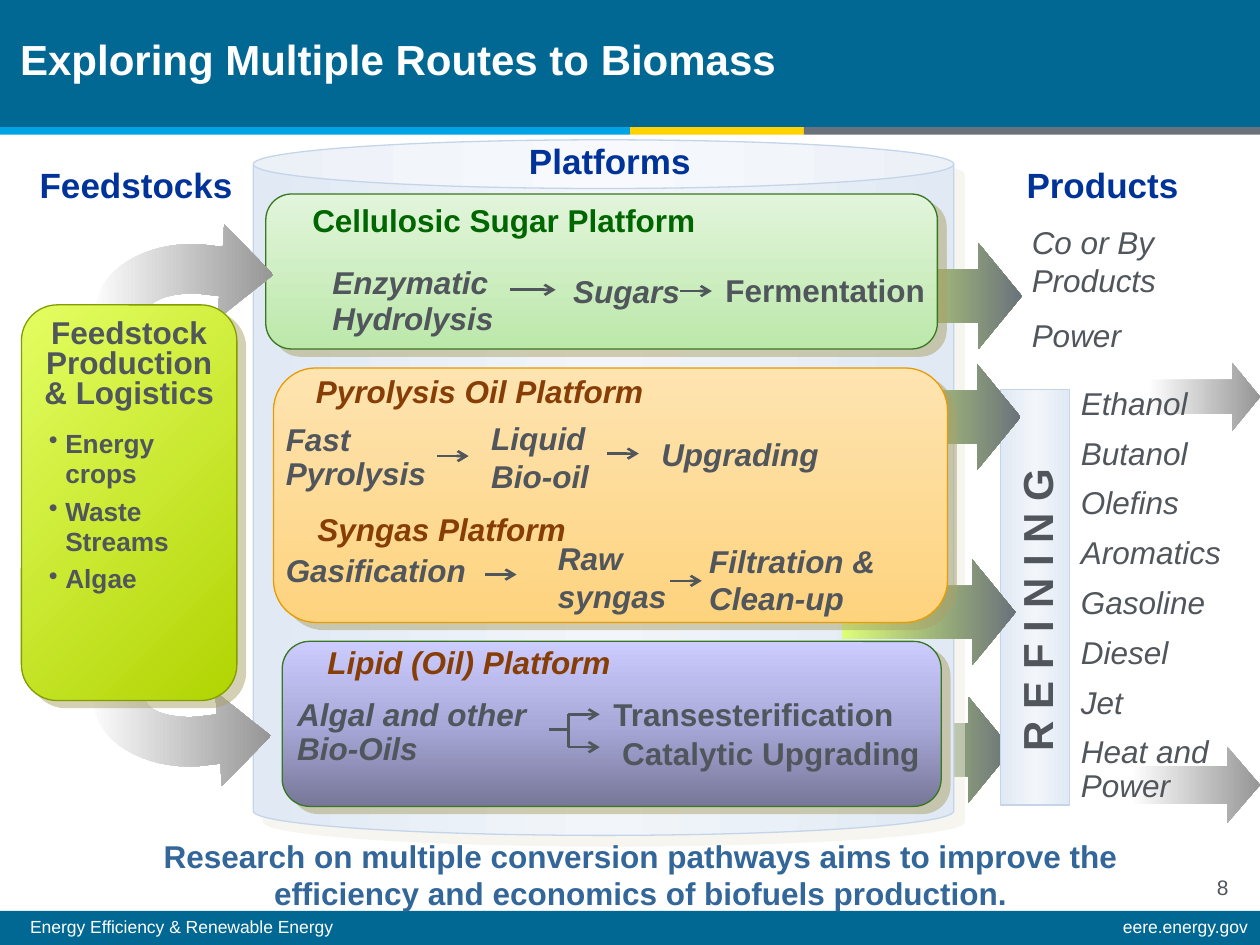
from lxml import etree
from pptx import Presentation
from pptx.dml.color import RGBColor
from pptx.enum.shapes import MSO_CONNECTOR, MSO_SHAPE
from pptx.enum.text import MSO_ANCHOR, PP_ALIGN
from pptx.oxml.ns import qn
from pptx.util import Inches, Pt

RECT, ROUND = MSO_SHAPE.RECTANGLE, MSO_SHAPE.ROUNDED_RECTANGLE
ARROW, CAN = MSO_SHAPE.RIGHT_ARROW, MSO_SHAPE.CAN
STRAIGHT = MSO_CONNECTOR.STRAIGHT
LEFT, CENTER, RIGHT = PP_ALIGN.LEFT, PP_ALIGN.CENTER, PP_ALIGN.RIGHT
MIDDLE, TOP = MSO_ANCHOR.MIDDLE, MSO_ANCHOR.TOP

rgb = RGBColor.from_string
WHITE, TEAL, SKY = rgb("FFFFFF"), rgb("006892"), rgb("00A4E4")
YELLOW, SLATE, GRAY = rgb("FFD200"), rgb("6A737B"), rgb("50565C")
NAVY, BROWN, GREEN, STEEL = rgb("003399"), rgb("873E06"), rgb("006600"), rgb("336699")
PALE_EDGE, GREEN_EDGE = rgb("C4D5EA"), rgb("397620")
ORANGE_EDGE, LIME_EDGE = rgb("E89B02"), rgb("829C02")
SILVER = [(0, rgb("FFFFFF")), (100, rgb("969696"))]
LIME_GRAY = [(0, rgb("DCFF79")), (100, SLATE)]
PALE = [(0, rgb("E0E9F4")), (50, rgb("F2F6FA")), (100, rgb("E0E9F4"))]
VIOLET = [(0, rgb("777799")), (50, rgb("A9A9DA")), (100, rgb("CCCCFF"))]
PEACH = [(0, rgb("FEE4B1")), (100, rgb("FED37E"))]
MINT = [(0, rgb("E2F5DB")), (100, rgb("BCE8AA"))]
LIME = [(0, rgb("E4FE62")), (100, rgb("B1D402"))]
TAN_SHADOW = (rgb("ABA269"), 6.4, 39)
PALE_SHADOW = (rgb("EEECE1"), 8.5, 45)

TITLE = "Exploring Multiple Routes to Biomass"
# Bars: left, top, width, height, colour
BARS = [(0, 0, 10, 1.01, TEAL), (0, 7.23, 10, 0.27, TEAL), (0, 1.01, 5, 0.06, SKY),
        (5, 1.01, 1.38, 0.06, YELLOW), (6.38, 1.01, 3.62, 0.06, SLATE)]

# Diagram shapes, back to front: preset, place, gradient, other format
OUTPUT_ARROW = (1.38, 0.84)
DIAGRAM = [
    (ARROW, (9.11, 2.88, 0.89, 0.54), SILVER, dict(adjust=(0.5, 0.41))),
    (ARROW, (8.97, 5.93, 1.03, 0.6), SILVER, dict(adjust=(0.5, 0.43))),
    (ARROW, (6.65, 5.53, *OUTPUT_ARROW), LIME_GRAY, dict(adjust=(0.5, 0.41))),
    (CAN, (2.01, 1.11, 5.56, 5.52), PALE,
     dict(adjust=(0.07,), edge=PALE_EDGE, shadow=PALE_SHADOW)),
    (ROUND, (2.24, 5.09, 5.23, 1.31), VIOLET,
     dict(angle=270, edge=GREEN_EDGE, shadow=TAN_SHADOW)),
    (RECT, (7.94, 3.09, 0.55, 3.3), PALE, dict(edge=PALE_EDGE)),
    *[(ARROW, (left, top, *OUTPUT_ARROW), LIME_GRAY, dict(adjust=(0.5, 0.41)))
      for left, top in [(6.73, 1.93), (6.72, 2.89), (6.68, 4.44)]],
    (ROUND, (2.17, 2.92, 5.35, 2.02), PEACH,
     dict(angle=90, edge=ORANGE_EDGE, shadow=TAN_SHADOW)),
    (ROUND, (2.11, 1.54, 5.33, 1.23), MINT,
     dict(angle=90, edge=GREEN_EDGE, shadow=TAN_SHADOW)),
]
FEEDSTOCK = (ROUND, (0.17, 2.42, 1.71, 3.14), LIME,
             dict(angle=45, edge=LIME_EDGE, shadow=TAN_SHADOW))

# Bent feed arrow: a pair is a corner, a triple of pairs is a curve
BEND = [(2.17, 2.18), (1.78, 1.78), (1.77, 1.96), (1.6, 1.94),
        ((1.16, 1.91), (0.78, 2.14), (0.76, 2.45)), (0.71, 3.03), (1.13, 3.07),
        (1.17, 2.48), ((1.18, 2.38), (1.36, 2.32), (1.57, 2.33)),
        (1.74, 2.35), (1.73, 2.53)]

# Step lines: x1, y1, x2, y2, arrowhead
LINES = [(4.05, 2.3, 4.41, 2.3, True), (5.4, 2.31, 5.65, 2.31, True),
         (3.47, 3.62, 3.72, 3.62, True), (4.82, 3.6, 5.07, 3.6, True),
         (3.85, 4.56, 4.1, 4.56, True), (5.32, 4.61, 5.57, 4.61, True),
         (4.51, 5.67, 4.76, 5.67, True), (4.51, 5.93, 4.76, 5.93, True),
         (4.51, 5.67, 4.51, 5.93, False), (4.5, 5.79, 4.36, 5.79, False)]

# Texts: words (a list gives paragraphs), place, format
HEAD = dict(size=20, color=NAVY, bold=True, align=CENTER)
STEP = dict(bold=True, italic=True)
PLATFORM = dict(STEP, color=BROWN)
FOOT = dict(size=10, color=WHITE, spacing=0.9)
TEXTS = [
    ("Energy Efficiency & Renewable Energy", (0.14, 7.24, 7.97, 0.26), FOOT),
    ("eere.energy.gov", (5.99, 7.24, 4.01, 0.26), dict(FOOT, align=RIGHT)),
    ("8", (9.56, 6.89, 0.43, 0.3), dict(size=12)),
    ("Feedstocks", (-0.23, 1.25, 2.62, 0.43), HEAD),
    ("Platforms", (2.74, 1.06, 4.2, 0.43), HEAD),
    ("Products", (7.71, 1.25, 2.08, 0.43), HEAD),
    ("Feedstock\vProduction\v& Logistics", (0.17, 2.49, 1.71, 0.82),
     dict(bold=True, align=CENTER, spacing=0.8)),
    (["Energy crops", "Waste Streams", "Algae"], (0.29, 3.36, 1.57, 1.73),
     dict(size=15, bold=True, spacing=0.95, before=4.5, bullet="•")),
    ("Cellulosic Sugar Platform", (2.38, 1.55, 4.15, 0.4), dict(bold=True, color=GREEN)),
    ("Enzymatic Hydrolysis", (2.54, 2.06, 1.6, 0.67), dict(STEP, spacing=0.95)),
    ("Sugars", (4.45, 2.11, 1.11, 0.37), STEP),
    ("Fermentation", (5.66, 2.1, 1.86, 0.37), dict(bold=True)),
    ("Pyrolysis Oil Platform", (2.41, 2.94, 3.94, 0.37), dict(PLATFORM, spacing=0.9)),
    ("Fast Pyrolysis", (2.17, 3.32, 1.6, 0.65), dict(STEP, spacing=0.9)),
    ("Liquid\vBio-oil", (3.8, 3.28, 1, 0.71), STEP),
    ("Upgrading", (5.15, 3.4, 2.27, 0.37), STEP),
    ("Syngas Platform", (2.42, 4, 3.31, 0.4), PLATFORM),
    ("Gasification", (2.17, 4.36, 1.73, 0.37), dict(STEP, spacing=0.9)),
    ("Raw syngas", (4.33, 4.23, 1.08, 0.71), STEP),
    ("Filtration &\vClean-up", (5.53, 4.25, 1.67, 0.64), STEP),
    ("Lipid (Oil) Platform", (2.5, 5.09, 3.94, 0.37), dict(PLATFORM, spacing=0.9)),
    ("Algal and other Bio-Oils", (2.26, 5.5, 2.02, 0.65), dict(STEP, spacing=0.9)),
    ("Transesterification", (4.77, 5.47, 2.69, 0.4), dict(bold=True)),
    ("Catalytic Upgrading", (4.84, 5.78, 2.9, 0.4), dict(bold=True)),
    ("R E F I N I N G", (6.99, 4.59, 2.47, 0.5),
     dict(size=24, bold=True, align=CENTER, rotation=270)),
    (["Co or By Products", "Power"], (8.09, 1.72, 1.91, 1.15), dict(italic=True, before=10)),
    (["Ethanol", "Butanol", "Olefins", "Aromatics", "Gasoline", "Diesel", "Jet",
      "Heat and Power"], (8.48, 3.03, 1.52, 3.49), dict(italic=True, spacing=0.9, before=9)),
    ("Research on multiple conversion pathways aims to improve the efficiency and "
     "economics of biofuels production.", (0.75, 6.59, 8.67, 0.7),
     dict(bold=True, color=STEEL, align=CENTER)),
]


def write(box, text, size=18, color=GRAY, bold=False, italic=False, align=LEFT,
          spacing=1.0, before=0, bullet=None, margin=0, anchor=TOP, rotation=0):
    box.rotation = rotation
    frame = box.text_frame
    frame.word_wrap = True
    frame.vertical_anchor = anchor
    for index, words in enumerate([text] if isinstance(text, str) else text):
        para = frame.add_paragraph() if index else frame.paragraphs[0]
        para.text = words
        para.alignment = align
        para.line_spacing = spacing
        para.space_before = Pt(before if index else 0)
        properties = para._p.get_or_add_pPr()
        if margin:
            properties.set("marL", str(Inches(margin)))
        if bullet:
            properties.set("marL", str(Inches(0.13)))
            properties.set("indent", str(Inches(-0.13)))
            etree.SubElement(properties, qn("a:buChar"), char=bullet)
        for span in para.runs:
            font = span.font
            font.name, font.size, font.bold, font.italic = "Arial", Pt(size), bold, italic
            font.color.rgb = color


def paint(shape, stops, angle=0, edge=None, shadow=None, adjust=()):
    for index, value in enumerate(adjust):
        shape.adjustments[index] = value
    shape.fill.gradient()
    shape.fill.gradient_angle = (360 - angle) % 360
    stop_list = shape.element.spPr.find(".//" + qn("a:gsLst"))
    stop_list[:] = []
    for position, color in stops:
        stop = etree.SubElement(stop_list, qn("a:gs"), pos=str(position * 1000))
        etree.SubElement(stop, qn("a:srgbClr"), val=str(color))
    if edge is None:
        shape.line.fill.background()
    else:
        shape.line.color.rgb = edge
        shape.line.width = Pt(0.75)
    shape.shadow.inherit = False
    if shadow:
        color, distance, direction = shadow
        effects = shape.element.spPr.find(qn("a:effectLst"))
        outer = etree.SubElement(effects, qn("a:outerShdw"), dist=str(Pt(distance)),
                                 dir=str(direction * 60000), algn="ctr", rotWithShape="0")
        tint = etree.SubElement(outer, qn("a:srgbClr"), val=str(color))
        etree.SubElement(tint, qn("a:alpha"), val="50000")


def flatten(outline, steps=16):
    points = []
    for part in outline:
        if len(part) == 2:
            points.append(part)
            continue
        start = points[-1]
        for step in range(1, steps + 1):
            t = step / steps
            weights = ((1 - t) ** 3, 3 * t * (1 - t) ** 2, 3 * t * t * (1 - t), t ** 3)
            points.append(tuple(sum(w * p[axis] for w, p in zip(weights, (start, *part)))
                                for axis in (0, 1)))
    return points


def add_bend(page, points):
    corners = [(Inches(x), Inches(y)) for x, y in points]
    builder = page.shapes.build_freeform(*corners[0], scale=1.0)
    builder.add_line_segments(corners[1:], close=True)
    paint(builder.convert_to_shape(), SILVER)


def add_preset(page, preset, place, stops, style):
    paint(page.shapes.add_shape(preset, *map(Inches, place)), stops, **style)


def main():
    deck = Presentation()
    deck.slide_width, deck.slide_height = Inches(10), Inches(7.5)
    page = deck.slides.add_slide(deck.slide_layouts[5])

    # Header and footer bars, then the title above them
    for *place, color in BARS:
        bar = page.shapes.add_shape(RECT, *map(Inches, place))
        bar.fill.solid()
        bar.fill.fore_color.rgb = color
        bar.line.fill.background()
        bar.shadow.inherit = False
    title = page.shapes.title
    title.left, title.top, title.width, title.height = map(Inches, (-0.12, 0.08, 8.37, 0.78))
    write(title, TITLE, size=24, color=WHITE, bold=True, spacing=Pt(28),
          margin=0.18, anchor=MIDDLE)
    page.shapes.element.append(title.element)

    # Platforms, outputs and feed arrows; the lower feed arrow mirrors the upper
    for item in DIAGRAM:
        add_preset(page, *item)
    bend = flatten(BEND)
    add_bend(page, bend)
    add_bend(page, [(x - 0.02, 8.02 - y) for x, y in bend])
    add_preset(page, *FEEDSTOCK)

    # Step lines
    for *ends, has_head in LINES:
        line = page.shapes.add_connector(STRAIGHT, *map(Inches, ends))
        line.line.color.rgb = GRAY
        line.line.width = Pt(1.5)
        if has_head:
            etree.SubElement(line.line._get_or_add_ln(), qn("a:tailEnd"), type="arrow")
        etree.SubElement(line.element.spPr, qn("a:effectLst"))

    # Texts
    for text, place, style in TEXTS:
        write(page.shapes.add_textbox(*map(Inches, place)), text, **style)
    deck.save("out.pptx")


if __name__ == "__main__":
    main()
